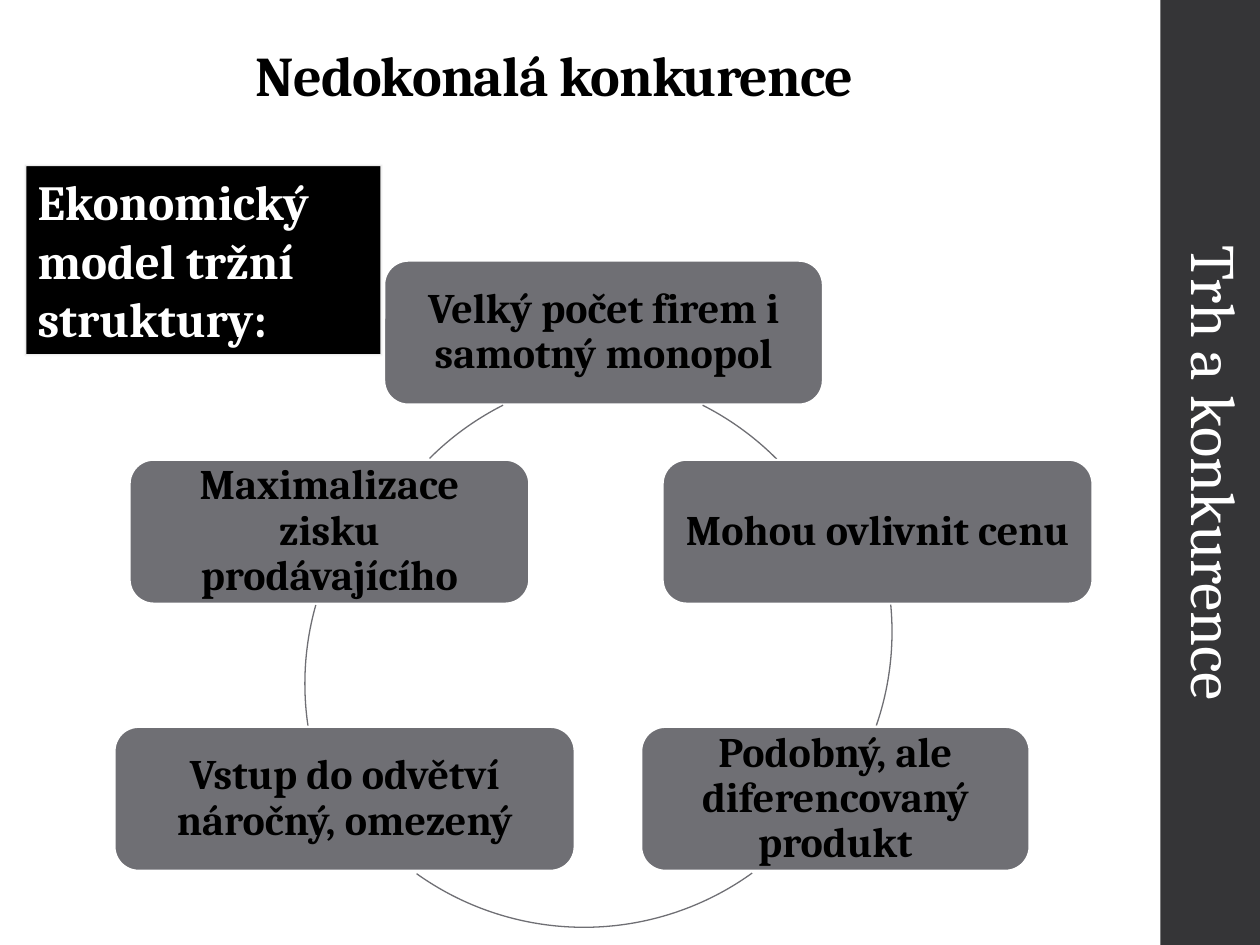
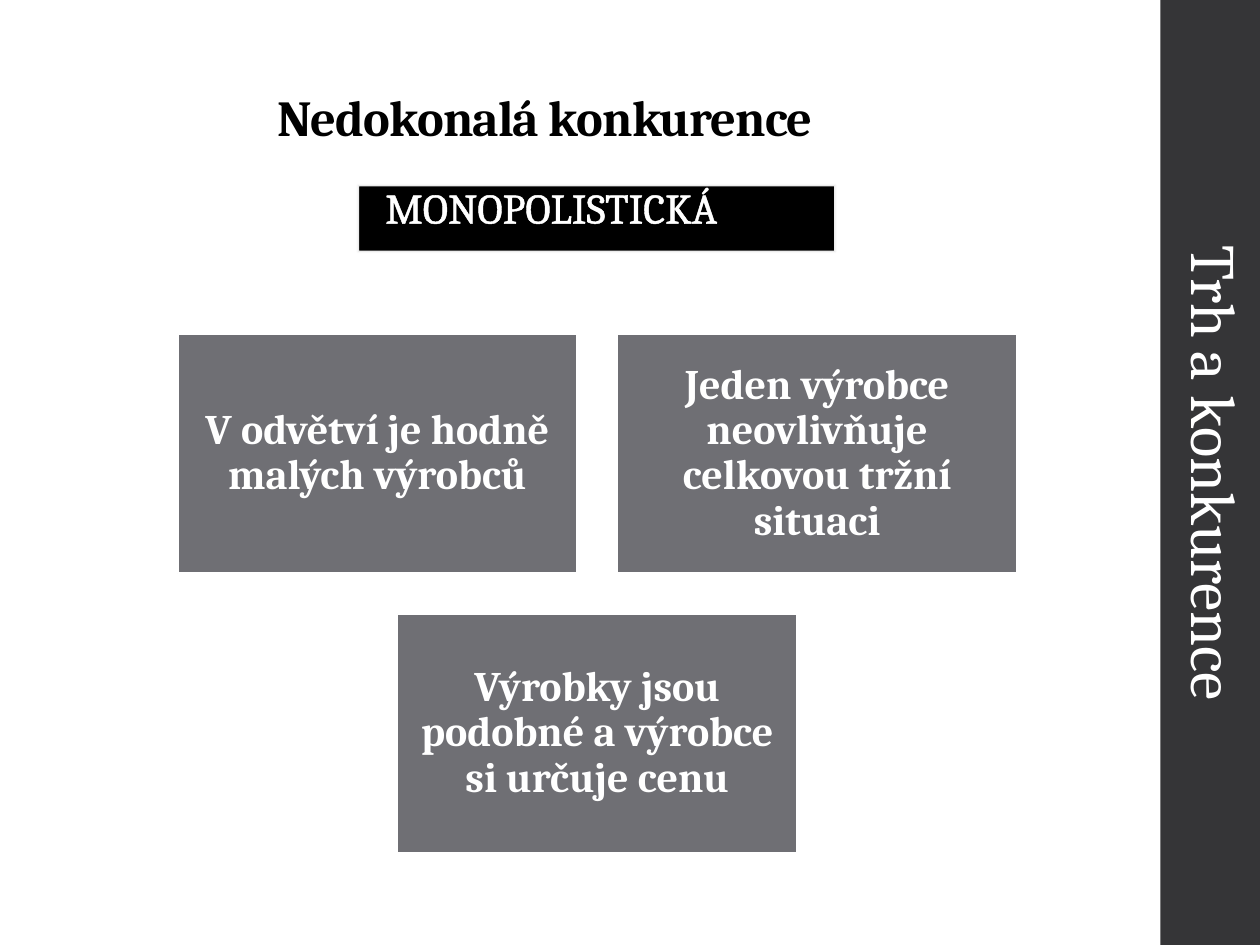
import math

import pptx
import pptx.util
from pptx.dml.color import RGBColor
from pptx.enum.shapes import MSO_SHAPE
from pptx.enum.text import MSO_ANCHOR, PP_ALIGN
from pptx.oxml.ns import qn
from lxml import etree

Inches, Pt = pptx.util.Inches, pptx.util.Pt

# Content
TITLE = "Nedokonalá konkurence"
CHAPTER = "Trh a konkurence"
MODEL_LABEL = "Ekonomický model tržní struktury:"
COMPETITION_TYPE = "MONOPOLISTICKÁ"

# Features around the ring: text, left, top, width
RING_FEATURES = [
    ("Velký počet firem i samotný monopol", 3.05, 2.07, 3.48),
    ("Mohou ovlivnit cenu", 5.26, 3.65, 3.41),
    ("Podobný, ale diferencovaný produkt", 5.09, 5.77, 3.08),
    ("Vstup do odvětví náročný, omezený", 0.91, 5.77, 3.65),
    ("Maximalizace zisku prodávajícího", 1.03, 3.65, 3.17),
]
# Clockwise links between neighbours: circle's left and top, start, end
RING_LINKS = [
    (2.26, 2.97, (5.58, 3.21), (6.17, 3.64)),
    (2.51, 2.73, (7.07, 4.8), (6.96, 5.76)),
    (2.35, 2.79, (5.97, 6.93), (3.31, 6.93)),
    (2.42, 3.14, (2.44, 5.76), (2.5, 4.8)),
    (2.74, 2.97, (3.41, 3.64), (3.99, 3.21)),
]
MONOPOLISTIC_ROWS = [
    ["V\u00a0odvětví je hodně malých výrobců",
     "Jeden výrobce neovlivňuje celkovou tržní situaci"],
    ["Výrobky jsou podobné a výrobce si určuje cenu"],
]

# Shared style
FONT = "Cambria"
BLACK, WHITE, GREY, BAND, PALE = "000000", "FFFFFF", "6F6F74", "353537", "F9F9F9"
FEATURE_HEIGHT = 1.14
RING_DIAMETER = 4.57
CARD_WIDTH, CARD_HEIGHT, CARD_GAP = 3.17, 1.9, 0.32
CARDS_CENTRE, CARDS_TOP = 4.74, 2.65


def color(hex_string):
    return RGBColor.from_string(hex_string)


def write(shape, text, size, ink, bold=False, align=PP_ALIGN.LEFT,
          anchor=MSO_ANCHOR.TOP, spacing=None, inset=None, tracking=None):
    frame = shape.text_frame
    frame.word_wrap = True
    frame.vertical_anchor = anchor
    if inset is not None:
        frame.margin_left = frame.margin_right = Inches(inset)
        frame.margin_top = frame.margin_bottom = Inches(inset)
    paragraph = frame.paragraphs[0]
    run = paragraph.add_run()
    run.text = text
    paragraph.alignment = align
    paragraph.line_spacing = spacing
    font = paragraph.font
    font.name, font.size, font.bold = FONT, Pt(size), bold
    font.color.rgb = color(ink)
    if tracking is not None:
        run.font._element.set("spc", str(round(tracking * 100)))
    return paragraph


def add_box(slide, kind, left, top, width, height, fill, line=None, weight=1.1):
    box = slide.shapes.add_shape(kind, Inches(left), Inches(top),
                                 Inches(width), Inches(height))
    box.shadow.inherit = False
    box.fill.solid()
    box.fill.fore_color.rgb = color(fill)
    if line:
        box.line.color.rgb = color(line)
        box.line.width = Pt(weight)
    else:
        box.line.fill.background()
    return box


def add_black_label(slide, left, top, width, height):
    label = add_box(slide, MSO_SHAPE.RECTANGLE, left, top, width, height,
                    BLACK, PALE, 1.35)
    line_color = label.line._ln.find(".//" + qn("a:srgbClr"))
    etree.SubElement(line_color, qn("a:alpha"), val="95000")
    return label


def add_text_box(slide, left, top, width, height):
    return slide.shapes.add_textbox(Inches(left), Inches(top),
                                    Inches(width), Inches(height))


def add_feature(slide, kind, text, left, top, width, height, ink):
    feature = add_box(slide, kind, left, top, width, height, GREY, WHITE)
    write(feature, text, 24, ink, True, PP_ALIGN.CENTER, MSO_ANCHOR.MIDDLE,
          0.9, 0.1)


def add_ring_link(slide, left, top, start, end):
    link = slide.shapes.add_shape(MSO_SHAPE.ARC, Inches(left), Inches(top),
                                  Inches(RING_DIAMETER), Inches(RING_DIAMETER))
    link.shadow.inherit = False
    link.fill.background()
    link.line.color.rgb = color(GREY)
    link.line.width = Pt(0.75)
    radius = RING_DIAMETER / 2
    for index, (x, y) in enumerate((start, end)):
        angle = math.degrees(math.atan2(y - top - radius, x - left - radius)) % 360
        link.adjustments[index] = angle * 0.6  # 60000 units a degree, over 100000


def add_slide(deck, title_place, title_size):
    slide = deck.slides.add_slide(deck.slide_layouts[6])
    # Side band with the chapter name
    add_box(slide, MSO_SHAPE.RECTANGLE, 9.21, 0, 0.8, 7.5, BAND)
    chapter = add_text_box(slide, 5.9, 3.4, 7.5, 0.71)
    chapter.rotation = 90
    write(chapter, CHAPTER, 36, WHITE, align=PP_ALIGN.CENTER)
    # Title
    title = add_text_box(slide, *title_place)
    write(title, TITLE, title_size, BLACK, True, anchor=MSO_ANCHOR.BOTTOM,
          spacing=0.9, tracking=-0.5)
    return slide


def build_ring_slide(deck):
    slide = add_slide(deck, (1.93, 0.21, 6.38, 0.7), 32)
    for (text, left, top, width), link in zip(RING_FEATURES, RING_LINKS):
        add_feature(slide, MSO_SHAPE.ROUNDED_RECTANGLE, text, left, top, width,
                    FEATURE_HEIGHT, BLACK)
        add_ring_link(slide, *link)
    model = add_black_label(slide, 0.2, 1.31, 2.83, 1.51)
    write(model, MODEL_LABEL, 28, WHITE, True)


def build_monopolistic_slide(deck):
    slide = add_slide(deck, (2.1, 0.52, 5.28, 0.7), 28.8)
    # Competition type, with outlined letters
    banner = add_black_label(slide, 2.84, 1.47, 3.79, 0.53)
    paragraph = write(banner, COMPETITION_TYPE, 24, WHITE, spacing=0.8, tracking=0.1)
    paragraph.space_before, paragraph.space_after = Pt(14), Pt(2)
    properties = paragraph._p.get_or_add_pPr()
    properties.set("marL", str(Inches(0.1)))
    properties.set("indent", str(Inches(0.02)))
    outline = etree.Element(qn("a:ln"), w=str(Pt(1.45)))
    fill = etree.SubElement(outline, qn("a:solidFill"))
    etree.SubElement(fill, qn("a:srgbClr"), val=WHITE)
    paragraph.runs[0].font._element.insert(0, outline)

    # Centred rows of cards
    for row, texts in enumerate(MONOPOLISTIC_ROWS):
        row_width = len(texts) * (CARD_WIDTH + CARD_GAP) - CARD_GAP
        top = CARDS_TOP + row * (CARD_HEIGHT + CARD_GAP)
        for column, text in enumerate(texts):
            left = CARDS_CENTRE - row_width / 2 + column * (CARD_WIDTH + CARD_GAP)
            add_feature(slide, MSO_SHAPE.RECTANGLE, text, left, top,
                        CARD_WIDTH, CARD_HEIGHT, WHITE)


def main():
    deck = pptx.Presentation()
    deck.slide_width, deck.slide_height = Inches(10), Inches(7.5)
    build_ring_slide(deck)
    build_monopolistic_slide(deck)
    deck.save("out.pptx")


if __name__ == "__main__":
    main()
